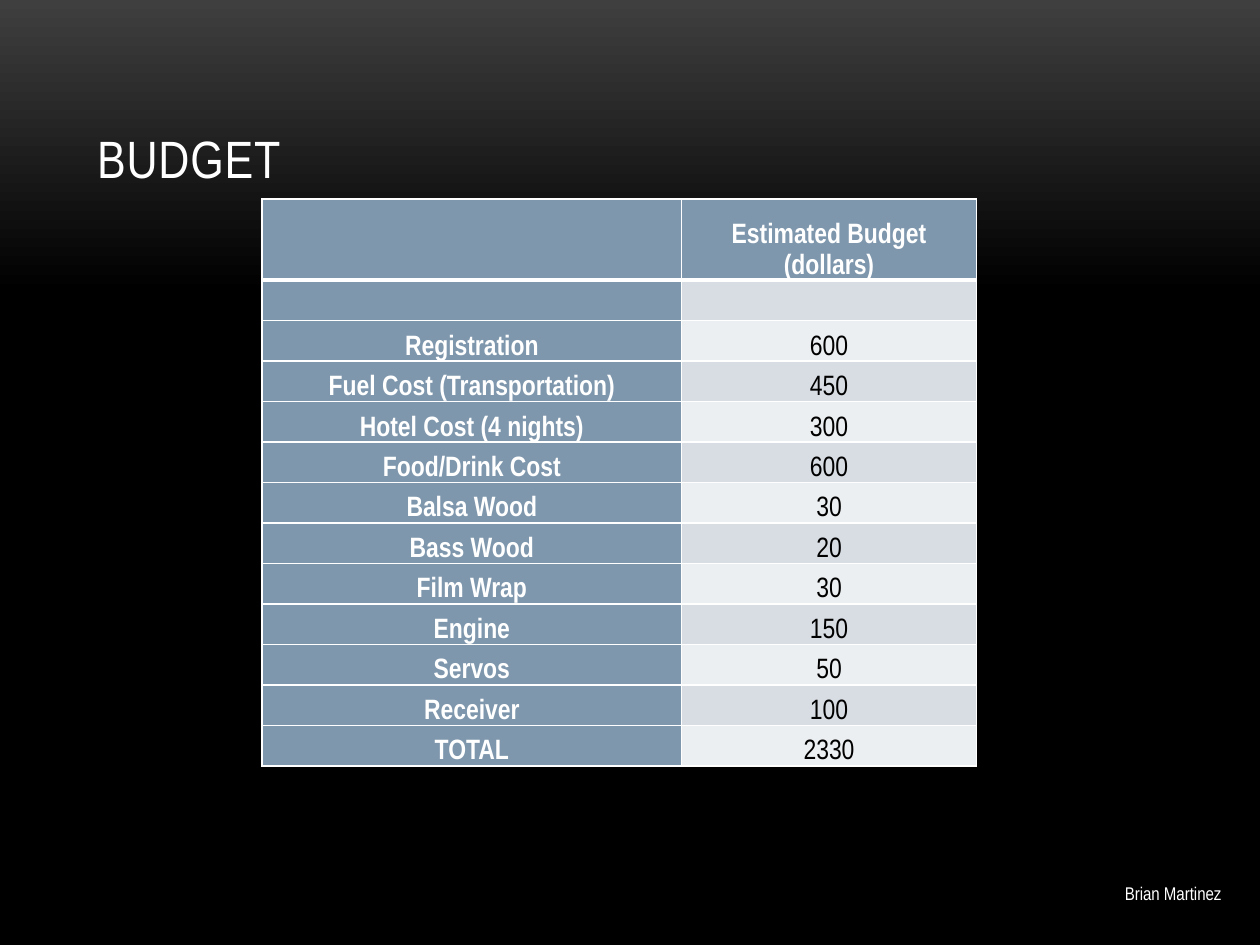
from pptx import Presentation
from pptx.dml.color import RGBColor
from pptx.enum.text import MSO_ANCHOR, MSO_AUTO_SIZE, PP_ALIGN
from pptx.oxml import parse_xml
from pptx.oxml.ns import nsdecls
from pptx.util import Inches, Pt

WHITE = RGBColor(255, 255, 255)
BLACK = RGBColor(0, 0, 0)
GREY = RGBColor(0x3F, 0x3F, 0x3F)
BLUE = RGBColor(0x7E, 0x97, 0xAD)
BANDS = RGBColor(0xEC, 0xEF, 0xF1), RGBColor(0xD8, 0xDD, 0xE3)
FACE = "Arial Narrow"
ROWS = [
    ("", "Estimated Budget (dollars)"),
    ("", ""),
    ("Registration", "600"),
    ("Fuel Cost (Transportation)", "450"),
    ("Hotel Cost (4 nights)", "300"),
    ("Food/Drink Cost", "600"),
    ("Balsa Wood", "30"),
    ("Bass Wood", "20"),
    ("Film Wrap", "30"),
    ("Engine", "150"),
    ("Servos", "50"),
    ("Receiver", "100"),
    ("TOTAL", "2330"),
]


def assign(item, values):
    for name, value in values.items():
        setattr(item, name, value)


def write(frame, text, size, color, bold=False):
    run = frame.paragraphs[0].add_run()
    run.text = text
    assign(run.font, {"name": FACE, "size": Pt(size), "bold": bold})
    run.font.color.rgb = color
    return run


def paint(slide):
    fill = slide.background.fill
    fill.gradient()
    fill.gradient_angle = 270
    for stop, place, color in zip(fill.gradient_stops, (0, 0.31), (GREY, BLACK)):
        stop.position = place
        stop.color.rgb = color


def add_title(slide, left, top, width, height):
    title = slide.shapes.title
    assign(title, {"left": left, "top": top, "width": width, "height": height})
    frame = title.text_frame
    assign(frame, {"vertical_anchor": MSO_ANCHOR.BOTTOM, "word_wrap": True})
    frame.paragraphs[0].alignment = PP_ALIGN.LEFT
    run = write(frame, "BUDGET", 30, WHITE)
    run.font._element.set("spc", "50")


def edge(cell, head):
    props = cell._tc.get_or_add_tcPr()
    for side in "LRTB":
        wide = Pt(3 if head and side == "B" else 1)
        props.append(parse_xml(
            f'<a:ln{side} {nsdecls("a")} w="{wide}"><a:solidFill>'
            f'<a:srgbClr val="{WHITE}"/></a:solidFill></a:ln{side}>'))


def fill_cell(cell, text, row, col):
    label = row == 0 or col == 0
    assign(cell, {
        "vertical_anchor": MSO_ANCHOR.BOTTOM,
        "margin_left": Inches(0.07),
        "margin_right": Inches(0.07),
        "margin_top": 0,
        "margin_bottom": 0,
    })
    edge(cell, row == 0)
    cell.fill.solid()
    cell.fill.fore_color.rgb = BLUE if label else BANDS[row % 2]
    if text:
        para = cell.text_frame.paragraphs[0]
        assign(para, {"alignment": PP_ALIGN.CENTER, "line_spacing": 1.15})
        write(cell.text_frame, text, 16, WHITE if label else BLACK, label)


def add_budget(slide, left, top, width, height):
    table = slide.shapes.add_table(len(ROWS), 2, left, top, width, height).table
    table.first_col = True
    first = Inches(3.33)
    table.columns[0].width = first
    table.columns[1].width = width - first
    unit = height // (len(ROWS) + 1)
    for row, texts in enumerate(ROWS):
        table.rows[row].height = unit if row else 2 * unit
        for col, text in enumerate(texts):
            fill_cell(table.cell(row, col), text, row, col)


def add_name(slide, left, top, width, height):
    frame = slide.shapes.add_textbox(left, top, width, height).text_frame
    assign(frame, {"word_wrap": False, "auto_size": MSO_AUTO_SIZE.SHAPE_TO_FIT_TEXT})
    write(frame, "Brian Martinez", 10.5, WHITE)


def main():
    deck = Presentation()
    assign(deck, {"slide_width": Inches(10), "slide_height": Inches(7.5)})
    slide = deck.slides.add_slide(deck.slide_layouts[5])
    paint(slide)
    add_title(slide, Inches(0.67), Inches(0.3), Inches(8.67), Inches(1.25))
    add_budget(slide, Inches(2.08), Inches(1.58), Inches(5.67), Inches(4.5))
    add_name(slide, Inches(8.83), Inches(6.95), Inches(1.04), Inches(0.28))
    deck.save("out.pptx")


if __name__ == "__main__":
    main()
